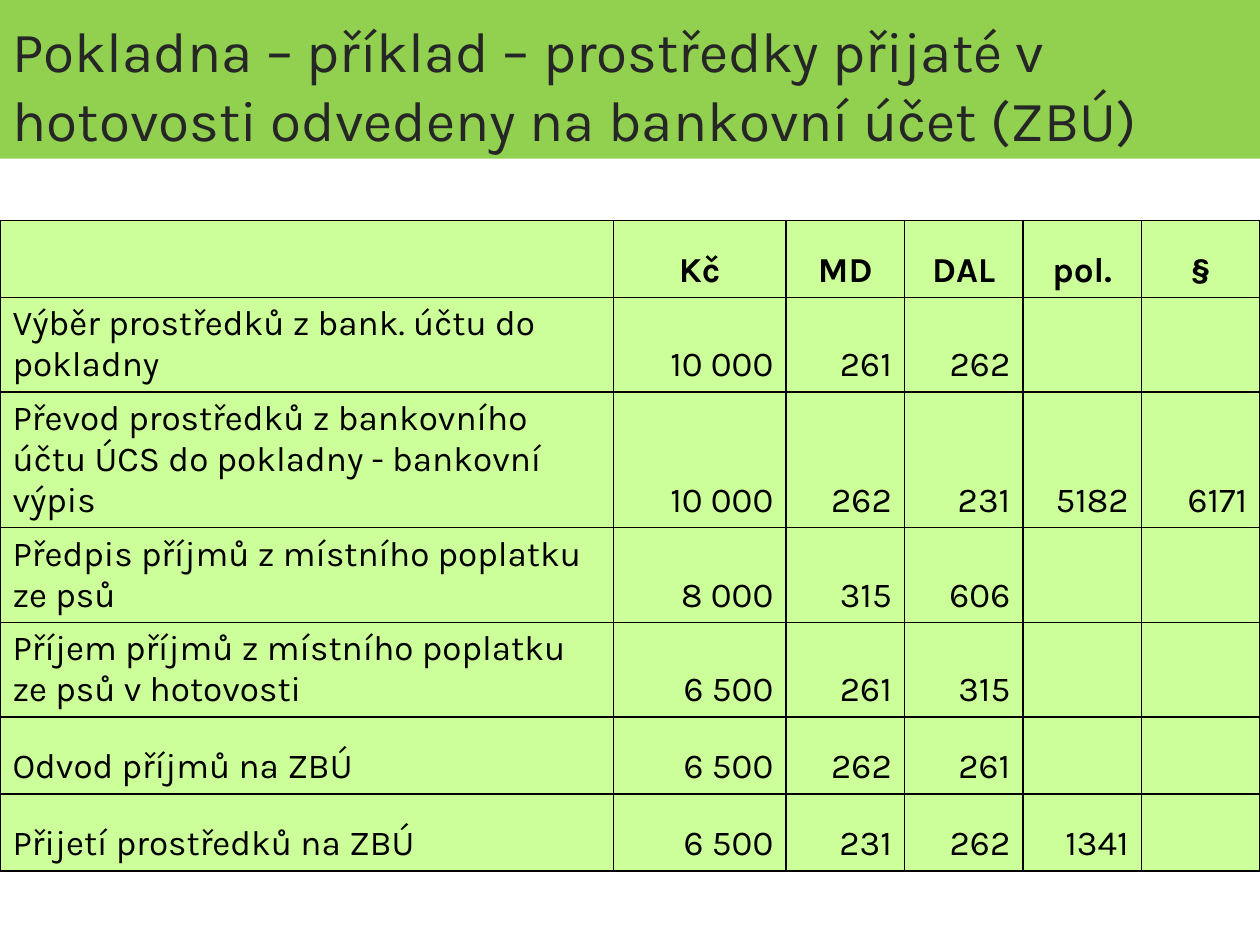
import dataclasses

import pptx
import pptx.dml.color
import pptx.enum.text
import pptx.oxml
import pptx.oxml.ns
import pptx.util

Pt = pptx.util.Pt
Align = pptx.enum.text.PP_ALIGN
Anchor = pptx.enum.text.MSO_ANCHOR


@dataclasses.dataclass(frozen=True)
class Theme:
    font: str = "Karla"
    title_size: float = 32.4
    table_size: float = 20
    title_fill: str = "92D050"
    title_ink: str = "262626"
    cell_fill: str = "CCFF99"
    ink: str = "000000"
    border: float = 1


class SlideBuilder:
    """Holds the theme and the current page, and draws each kind of element."""

    def __init__(self, deck, theme):
        self.theme = theme
        self.page = deck.slides.add_slide(deck.slide_layouts[5])

    def fill(self, target, color):
        target.fill.solid()
        target.fill.fore_color.rgb = pptx.dml.color.RGBColor.from_string(color)

    def set_text(self, frame, text, size, color, align, bold=False):
        frame.text = text
        para = frame.paragraphs[0]
        para.alignment = align
        for font in [para.font] + [span.font for span in para.runs]:
            font.name = self.theme.font
            font.size = Pt(size)
            font.bold = bold
            font.color.rgb = pptx.dml.color.RGBColor.from_string(color)

    def title(self, text, left, top, width, height):
        box = self.page.shapes.title
        box.left, box.top, box.width, box.height = map(Pt, (left, top, width, height))
        self.fill(box, self.theme.title_fill)
        frame = box.text_frame
        frame.word_wrap = True
        frame.auto_size = pptx.enum.text.MSO_AUTO_SIZE.NONE
        frame.vertical_anchor = Anchor.BOTTOM
        self.set_text(frame, text, self.theme.title_size, self.theme.title_ink, Align.LEFT)

    def outline(self, cell):
        properties = cell._tc.get_or_add_tcPr()
        for position, side in enumerate(("lnL", "lnR", "lnT", "lnB")):
            line = pptx.oxml.parse_xml(
                f'<a:{side} {pptx.oxml.ns.nsdecls("a")} w="{Pt(self.theme.border)}">'
                f'<a:solidFill><a:srgbClr val="{self.theme.ink}"/></a:solidFill></a:{side}>'
            )
            properties.insert(position, line)

    def table(self, rows, left, top, widths, heights):
        frame = self.page.shapes.add_table(
            len(rows), len(widths), Pt(left), Pt(top), Pt(sum(widths)), Pt(sum(heights))
        )
        table = frame.table
        table.horz_banding = False
        for column, width in zip(table.columns, widths):
            column.width = Pt(width)
        for row, height in zip(table.rows, heights):
            row.height = Pt(height)
        for row_index, values in enumerate(rows):
            header = row_index == 0
            for column_index in range(len(widths)):
                cell = table.cell(row_index, column_index)
                text = values[column_index] if column_index < len(values) else ""
                align = Align.CENTER if header else Align.RIGHT if column_index else Align.LEFT
                self.set_text(cell.text_frame, text, self.theme.table_size, self.theme.ink, align, header)
                cell.vertical_anchor = Anchor.BOTTOM
                self.fill(cell, self.theme.cell_fill)
                self.outline(cell)


def main():
    deck = pptx.Presentation()
    deck.slide_width, deck.slide_height = Pt(720), Pt(540)
    builder = SlideBuilder(deck, Theme())
    builder.title(
        "Pokladna – příklad – prostředky přijaté v hotovosti odvedeny na bankovní účet (ZBÚ)",
        0, 0, 720, 90.7,
    )
    entries = [
        ("", "Kč", "MD", "DAL", "pol.", "§"),
        ("Výběr prostředků z bank. účtu do pokladny", "10 000", "261", "262"),
        ("Převod prostředků z bankovního účtu ÚCS do pokladny - bankovní výpis",
         "10 000", "262", "231", "5182", "6171"),
        ("Předpis příjmů z místního poplatku ze psů", "8 000", "315", "606"),
        ("Příjem příjmů z místního poplatku ze psů v hotovosti", "6 500", "261", "315"),
        ("Odvod příjmů na ZBÚ", "6 500", "262", "261"),
        ("Přijetí prostředků na ZBÚ", "6 500", "231", "262", "1341"),
    ]
    widths = [350.5, 98.7] + [67.7] * 4
    builder.table(entries, 0, 126, widths, [44, 42, 47, 42, 47, 44, 44])
    deck.save("out.pptx")


if __name__ == "__main__":
    main()
